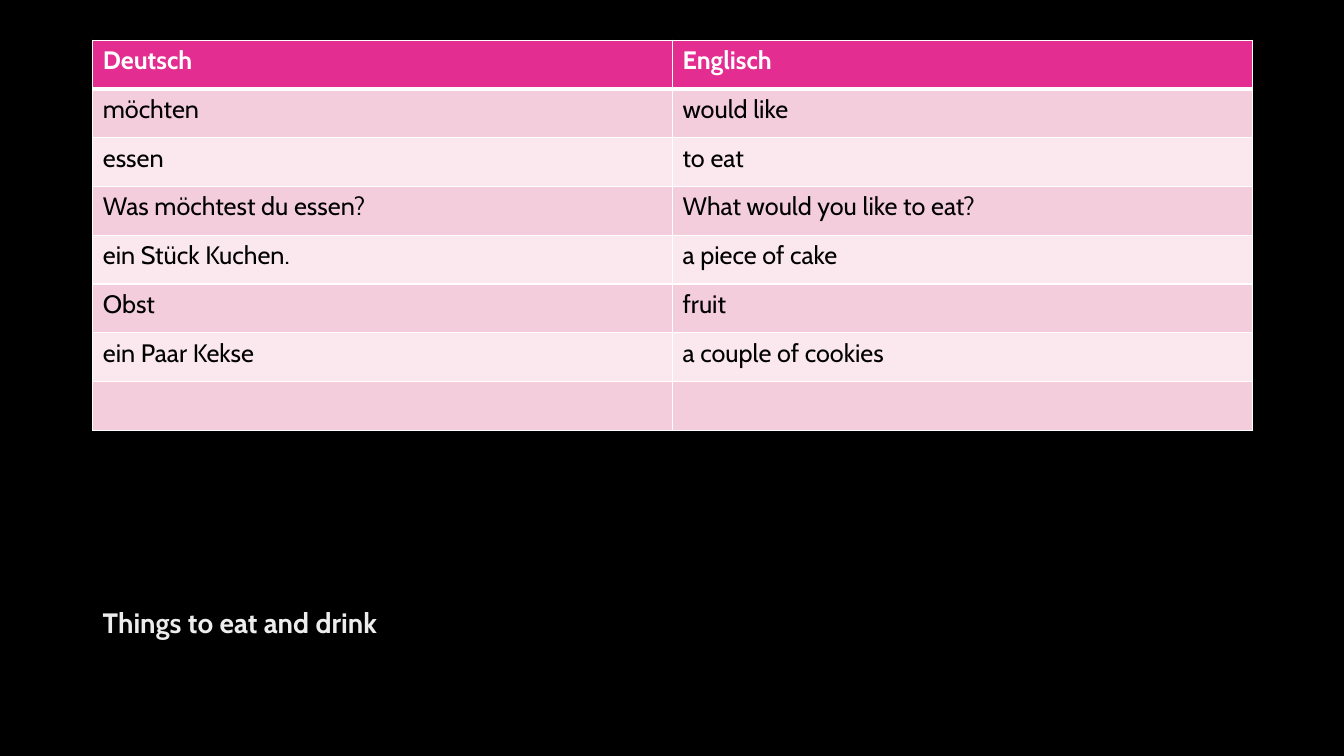
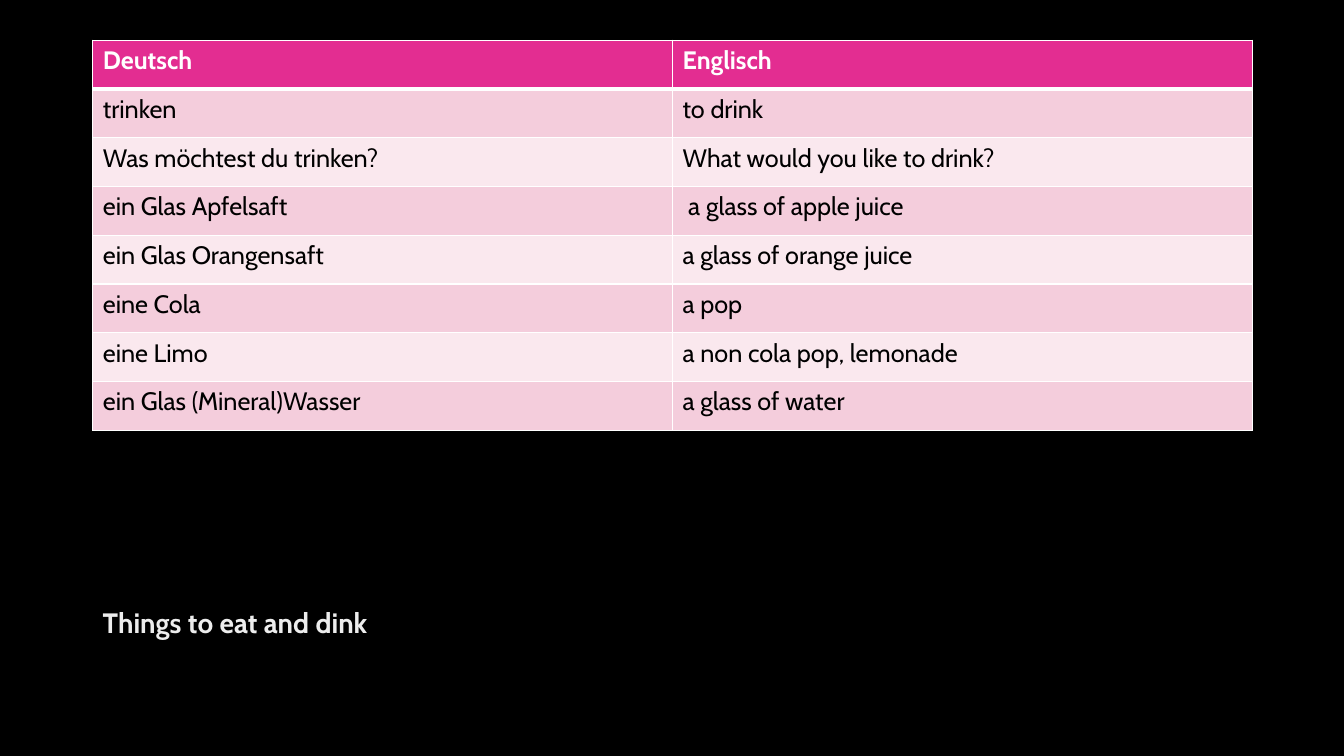
from lxml.etree import SubElement
from pptx import Presentation
from pptx.dml.color import RGBColor
from pptx.enum.text import MSO_ANCHOR
from pptx.oxml.ns import qn
from pptx.util import Inches, Pt

COLORS = {
    "background": "000000",
    "header": "E32D91",
    "odd_row": "F4CDDC",
    "even_row": "FAE8EE",
    "border": "FFFFFF",
    "header_text": "FFFFFF",
    "cell_text": "000000",
    "caption": "EDEDED",
}
FONT = "Cabin"
TABLE_BOX = (0.92, 0.4, 11.5, 3.87)
CAPTION_BOX = (0.92, 5.9, 11.5, 0.55)
HEADER = ("Deutsch", "Englisch")

VOCABULARY = [
    ("Things to eat and drink", [
        ("möchten", "would like"),
        ("essen", "to eat"),
        ("Was möchtest du essen?", "What would you like to eat?"),
        ("ein Stück Kuchen.", "a piece of cake"),
        ("Obst", "fruit"),
        ("ein Paar Kekse", "a couple of cookies"),
        ("", ""),
    ]),
    ("Things to eat and dink", [
        ("trinken", "to drink"),
        ("Was möchtest du trinken?", "What would you like to drink?"),
        ("ein Glas Apfelsaft", " a glass of apple juice"),
        ("ein Glas Orangensaft", "a glass of orange juice"),
        ("eine Cola", "a pop"),
        ("eine Limo", "a non cola pop, lemonade"),
        ("ein Glas (Mineral)Wasser", "a glass of water"),
    ]),
]


def color(name):
    return RGBColor.from_string(COLORS[name])


def style_text(paragraph, size, color_name, bold):
    for run in paragraph.runs:
        run.font.name = FONT
        run.font.size = Pt(size)
        run.font.bold = bold
        run.font.color.rgb = color(color_name)


def set_borders(cell, top, bottom):
    """Draw all four cell borders; must run before the fill is set."""
    properties = cell._tc.get_or_add_tcPr()
    for side, width in (("L", 1), ("R", 1), ("T", top), ("B", bottom)):
        line = SubElement(properties, qn(f"a:ln{side}"), w=str(Pt(width)))
        fill = SubElement(line, qn("a:solidFill"))
        SubElement(fill, qn("a:srgbClr"), val=COLORS["border"])


def style_cell(cell, row):
    set_borders(cell, top=3 if row == 1 else 1, bottom=3 if row == 0 else 1)
    is_header = row == 0
    band = "header" if is_header else "odd_row" if row % 2 else "even_row"
    cell.fill.solid()
    cell.fill.fore_color.rgb = color(band)
    text_color = "header_text" if is_header else "cell_text"
    style_text(cell.text_frame.paragraphs[0], 18, text_color, is_header)


def add_vocabulary_table(slide, box, pairs):
    rows = [HEADER, *pairs]
    table = slide.shapes.add_table(
        len(rows), len(HEADER), *map(Inches, box)).table
    for row, words in enumerate(rows):
        for column, word in enumerate(words):
            cell = table.cell(row, column)
            cell.text_frame.text = word
            style_cell(cell, row)


def add_caption(slide, box, text):
    text_frame = slide.shapes.add_textbox(*map(Inches, box)).text_frame
    text_frame.word_wrap = True
    text_frame.vertical_anchor = MSO_ANCHOR.MIDDLE
    text_frame.text = text
    style_text(text_frame.paragraphs[0], 20, "caption", True)


def add_vocabulary_slide(presentation, caption, pairs):
    slide = presentation.slides.add_slide(presentation.slide_layouts[6])
    slide.background.fill.solid()
    slide.background.fill.fore_color.rgb = color("background")
    add_caption(slide, CAPTION_BOX, caption)
    add_vocabulary_table(slide, TABLE_BOX, pairs)


def main():
    presentation = Presentation()
    presentation.slide_width = Inches(13.33)
    presentation.slide_height = Inches(7.5)
    for caption, pairs in VOCABULARY:
        add_vocabulary_slide(presentation, caption, pairs)
    presentation.save("out.pptx")


if __name__ == "__main__":
    main()
